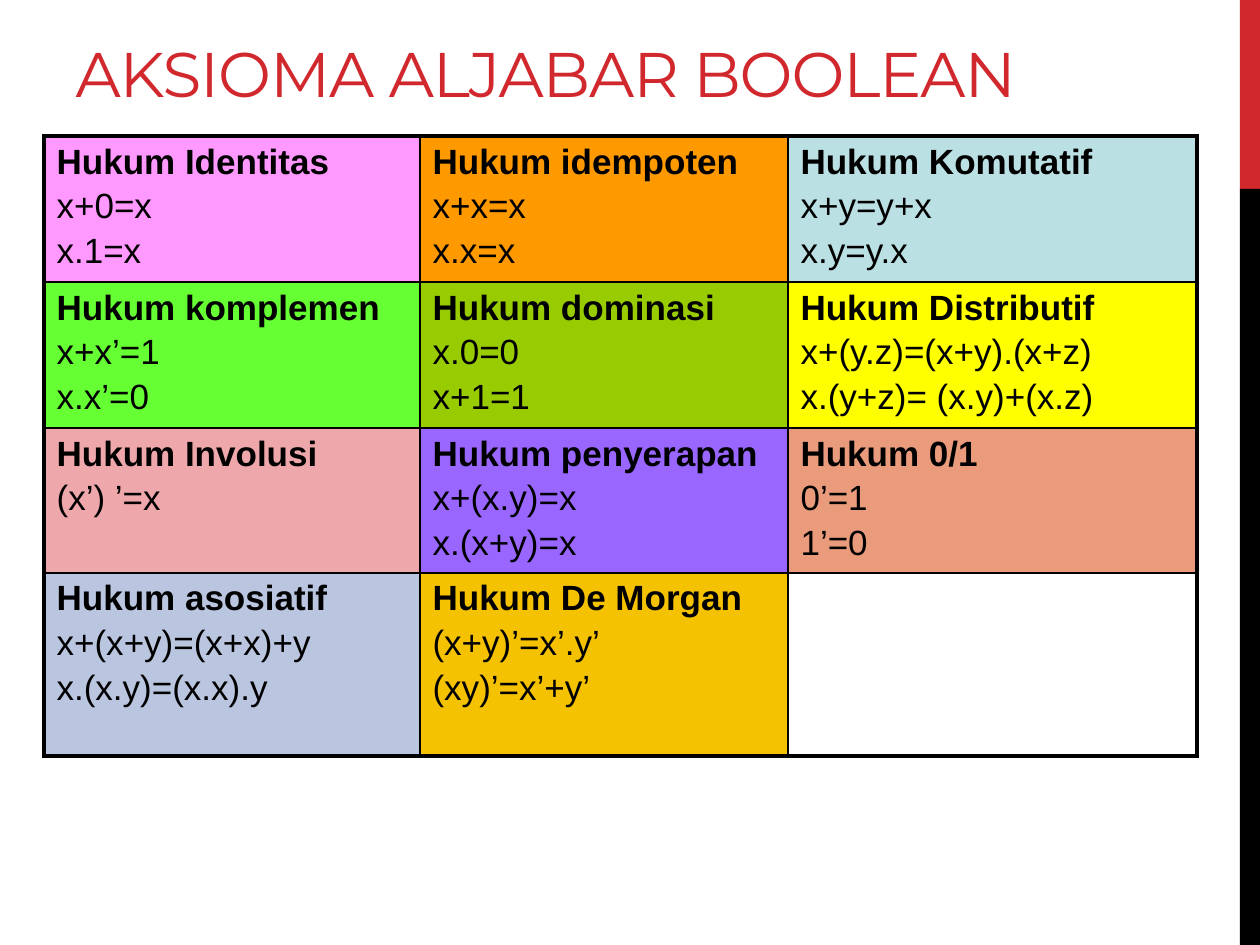
"""Build a slide with a coloured table of the axioms of Boolean algebra."""
from lxml.etree import SubElement
from pptx import Presentation
from pptx.dml.color import RGBColor
from pptx.enum.shapes import MSO_SHAPE
from pptx.enum.text import MSO_ANCHOR, MSO_AUTO_SIZE, PP_ALIGN
from pptx.oxml.ns import qn
from pptx.util import Emu, Pt

PX = 914400 // 126
RED, BLACK = "D1282E", "000000"
THIN, THICK = Pt(1), Pt(2.25)

LAWS = [
    [
        ("FF99FF", ["Hukum Identitas", "x+0=x", "x.1=x"]),
        ("FF9900", ["Hukum idempoten", "x+x=x", "x.x=x"]),
        ("BBE0E3", ["Hukum Komutatif", "x+y=y+x", "x.y=y.x"]),
    ],
    [
        ("66FF33", ["Hukum komplemen", "x+x’=1", "x.x’=0"]),
        ("99CC00", ["Hukum dominasi", "x.0=0", "x+1=1"]),
        ("FFFF00", ["Hukum Distributif", "x+(y.z)=(x+y).(x+z)", "x.(y+z)= (x.y)+(x.z)"]),
    ],
    [
        ("EEA7AA", ["Hukum Involusi", "(x’) ’=x"]),
        ("9966FF", ["Hukum penyerapan", "x+(x.y)=x", "x.(x+y)=x"]),
        ("EA9B7C", ["Hukum 0/1", "0’=1", "1’=0"]),
    ],
    [
        ("BAC5DF", ["Hukum asosiatif", "x+(x+y)=(x+x)+y", "x.(x.y)=(x.x).y"]),
        ("F5C201", ["Hukum De Morgan", "(x+y)’=x’.y’", "(xy)’=x’+y’"]),
        (None, []),
    ],
]
COLUMN_WIDTHS = [376, 368, 409]
ROW_HEIGHTS = [146, 146, 145, 183]


def color(value):
    return RGBColor.from_string(value)


def set_border(cell, side, width):
    line = SubElement(cell._tc.get_or_add_tcPr(), qn(f"a:ln{side}"), w=str(width))
    fill = SubElement(line, qn("a:solidFill"))
    SubElement(fill, qn("a:srgbClr"), val=BLACK)


presentation = Presentation()
presentation.slide_width = Emu(1260 * PX)
presentation.slide_height = Emu(945 * PX)
slide = presentation.slides.add_slide(presentation.slide_layouts[5])

for top, height, bar_color in [(0, 189, RED), (189, 756, BLACK)]:
    bar = slide.shapes.add_shape(
        MSO_SHAPE.RECTANGLE, 1240 * PX, top * PX, 20 * PX, height * PX
    )
    bar.shadow.inherit = False
    bar.fill.solid()
    bar.fill.fore_color.rgb = color(bar_color)
    bar.line.fill.background()

title = slide.shapes.title
title.left, title.top, title.width, title.height = (
    Emu(length * PX) for length in (63, 21, 1081, 95)
)
title.text_frame.text = "AKSIOMA ALJABAR BOOLEAN"
title.text_frame.auto_size = MSO_AUTO_SIZE.NONE
title.text_frame.vertical_anchor = MSO_ANCHOR.BOTTOM
heading = title.text_frame.paragraphs[0]
heading.alignment = PP_ALIGN.LEFT
heading_run = heading.runs[0]
heading_run.font.name = "Montserrat"
heading_run.font.size = Pt(36)
heading_run.font.color.rgb = color(RED)
heading_run._r.get_or_add_rPr().set("spc", "-60")

table = slide.shapes.add_table(
    len(ROW_HEIGHTS), len(COLUMN_WIDTHS), 44 * PX, 136 * PX,
    sum(COLUMN_WIDTHS) * PX, sum(ROW_HEIGHTS) * PX,
).table
table.first_row = False
table.horz_banding = False
for column, width in zip(table.columns, COLUMN_WIDTHS):
    column.width = Emu(width * PX)
for row, height in zip(table.rows, ROW_HEIGHTS):
    row.height = Emu(height * PX)

last_row, last_column = len(ROW_HEIGHTS) - 1, len(COLUMN_WIDTHS) - 1
for row_index, laws in enumerate(LAWS):
    for column_index, (fill_color, lines) in enumerate(laws):
        cell = table.cell(row_index, column_index)
        outer_sides = {
            "L": column_index == 0,
            "R": column_index == last_column,
            "T": row_index == 0,
            "B": row_index == last_row,
        }
        for side, is_outer in outer_sides.items():
            set_border(cell, side, THICK if is_outer else THIN)
        if fill_color:
            cell.fill.solid()
            cell.fill.fore_color.rgb = color(fill_color)
        else:
            cell.fill.background()
        cell.text_frame.text = "\n".join(lines)
        for index, paragraph in enumerate(cell.text_frame.paragraphs):
            if index > 0:
                paragraph.space_before = Pt(3.3)
            for run in paragraph.runs:
                run.font.name = "Arial"
                run.font.size = Pt(20)
                run.font.bold = index == 0
                run.font.color.rgb = color(BLACK)

presentation.save("out.pptx")
